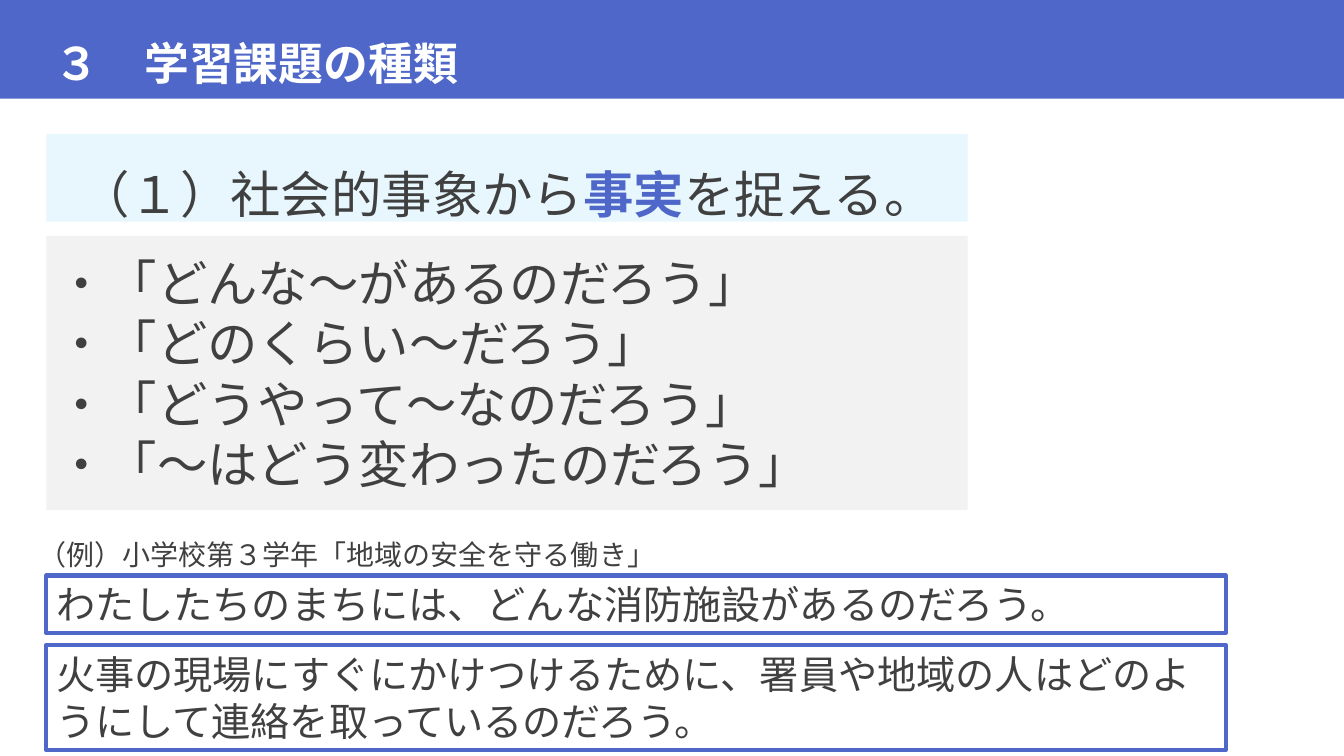
from lxml import etree
from pptx import Presentation
from pptx import util as u
from pptx.dml.color import RGBColor
from pptx.enum import shapes, text
from pptx.oxml import ns

PX = 9144  # EMU per px, 100 px to the inch
FONT = "Noto Sans CJK JP"
BLUE = RGBColor(0x4E, 0x67, 0xC8)
PALE_BLUE = RGBColor(0xDF, 0xF5, 0xFD)
PALE_GRAY = RGBColor(0xF2, 0xF2, 0xF2)
DARK = RGBColor(0x40, 0x40, 0x40)
WHITE = RGBColor(0xFF, 0xFF, 0xFF)


def write(tf, paragraphs, size, **form):
    """Fill a text frame; each paragraph is a list of (text, colour, bold)."""
    tf.word_wrap = True
    for i, runs in enumerate(paragraphs):
        p = tf.add_paragraph() if i else tf.paragraphs[0]
        for name, value in ({"alignment": text.PP_ALIGN.LEFT} | form).items():
            setattr(p, name, value)
        for words, colour, bold in runs:
            r = p.add_run()
            r.text = words
            r.font.color.rgb = colour
            for name, value in {"size": u.Pt(size), "bold": bold, "name": FONT}.items():
                setattr(r.font, name, value)
            etree.SubElement(r.font._element, ns.qn("a:ea"), typeface=FONT)


def add_panel(box, fill, line=None):
    """Add a flat rectangle with vertically centred text."""
    sp = s.shapes.add_shape(shapes.MSO_SHAPE.RECTANGLE, *(v * PX for v in box))
    sp.shadow.inherit = False
    sp.fill.solid()
    sp.fill.fore_color.rgb = fill
    if line is None:
        sp.line.fill.background()
    else:
        sp.line.color.rgb = line
        sp.line.width = u.Pt(3)
    sp.text_frame.vertical_anchor = text.MSO_ANCHOR.MIDDLE
    return sp


prs = Presentation()
prs.slide_width, prs.slide_height = u.Emu(12192000), u.Emu(750 * PX)
s = prs.slides.add_slide(prs.slide_layouts[6])

questions = [
    "・「どんな～があるのだろう」",
    "・「どのくらい～だろう」",
    "・「どうやって～なのだろう」",
    "・「～はどう変わったのだろう」",
]
sp = add_panel((46, 234, 914, 272), PALE_GRAY)
write(sp.text_frame, [[(q, DARK, False)] for q in questions], 36)

sp = add_panel((46, 133, 914, 87), PALE_BLUE)
colour = sp.fill._xPr.find(".//" + ns.qn("a:srgbClr"))
etree.SubElement(colour, ns.qn("a:alpha"), val="70000")
heading = [
    ("（１）社会的事象から", DARK, False),
    ("事実", BLUE, True),
    ("を捉える。", DARK, False),
]
write(sp.text_frame, [heading], 36, alignment=text.PP_ALIGN.CENTER, line_spacing=1.5)

sp = add_panel((0, 0, 1333, 98), BLUE)
sp.width = prs.slide_width
write(sp.text_frame, [[("　３　学習課題の種類", WHITE, True)]], 32, line_spacing=1.5)

caption = s.shapes.add_textbox(*(v * PX for v in (28, 528, 662, 44)))
write(caption.text_frame, [[("（例）小学校第３学年「地域の安全を守る働き」", DARK, False)]], 20)

examples = [
    (571, 57, "わたしたちのまちには、どんな消防施設があるのだろう。"),
    (640, 104, "火事の現場にすぐにかけつけるために、署員や地域の人はどのようにして連絡を取っているのだろう。"),
]
for top, height, words in examples:
    sp = add_panel((46, top, 1170, height), WHITE, BLUE)
    write(sp.text_frame, [[(words, DARK, False)]], 28)

prs.save("out.pptx")
